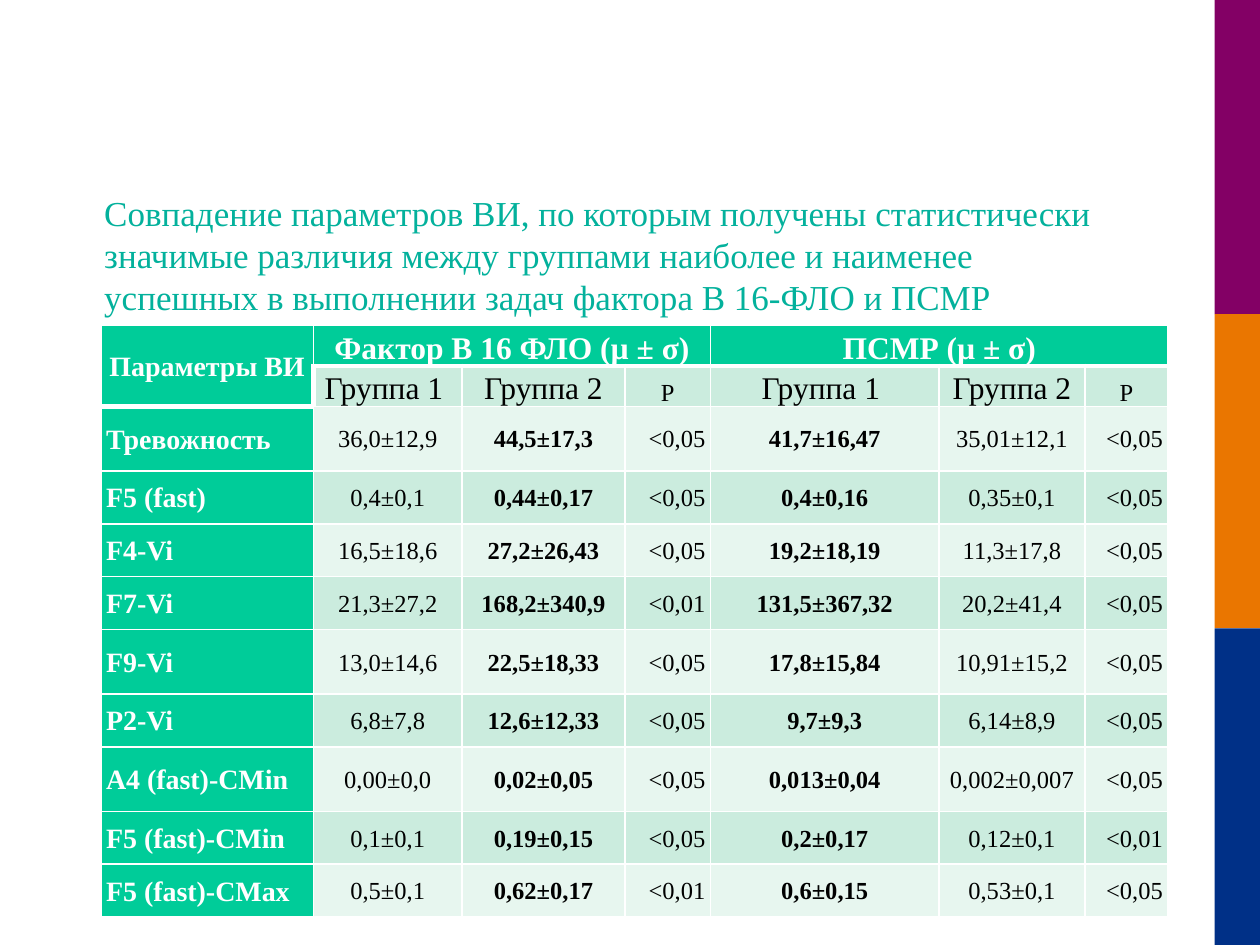
from typing import NamedTuple

from lxml.etree import SubElement
from pptx import Presentation
from pptx.dml.color import RGBColor
from pptx.enum.shapes import MSO_SHAPE
from pptx.enum.text import MSO_ANCHOR, MSO_AUTO_SIZE, PP_ALIGN
from pptx.oxml.ns import qn
from pptx.util import Pt

FONT = "Times New Roman"
WHITE = RGBColor(0xFF, 0xFF, 0xFF)
BLACK = RGBColor(0, 0, 0)
TEAL = RGBColor(0x03, 0xB1, 0x9C)
GREEN = RGBColor(0x00, 0xCC, 0x99)
MINT = RGBColor(0xCB, 0xEC, 0xDE)
PALE = RGBColor(0xE7, 0xF6, 0xEF)
PURPLE = RGBColor(0x83, 0x00, 0x65)
ORANGE = RGBColor(0xEA, 0x76, 0x00)
NAVY = RGBColor(0x00, 0x30, 0x87)

TITLE = (
    "Совпадение параметров ВИ, по которым получены статистически значимые "
    "различия между группами наиболее и наименее успешных в выполнении задач "
    "фактора В 16-ФЛО и ПСМР"
)


class Style(NamedTuple):
    size: int
    color: RGBColor
    bold: bool = False
    align: PP_ALIGN = PP_ALIGN.CENTER
    anchor: MSO_ANCHOR = MSO_ANCHOR.MIDDLE


class Band(NamedTuple):
    top: float
    height: float
    color: RGBColor


class Parameter(NamedTuple):
    name: str
    height: float
    values: tuple[str, ...]


BANDS = [
    Band(0, 179.5, PURPLE),
    Band(179.5, 179.5, ORANGE),
    Band(359, 181, NAVY),
]

CORNER = Style(16, WHITE, True)
TEST = Style(18, WHITE, True, anchor=MSO_ANCHOR.BOTTOM)
GROUP = Style(18, BLACK, anchor=MSO_ANCHOR.BOTTOM)
LEVEL = GROUP._replace(size=14)
NAME = Style(16, WHITE, True, PP_ALIGN.LEFT)
VALUE = Style(14, BLACK)
HIGHER = VALUE._replace(bold=True)
SIGNIFICANCE = VALUE._replace(align=PP_ALIGN.RIGHT)
ROW_STYLES = [NAME, VALUE, HIGHER, SIGNIFICANCE, HIGHER, VALUE, SIGNIFICANCE]

COLUMN_WIDTHS = [121.5, 85, 93, 49, 130.5, 83.5, 47.5]
HEADER_HEIGHTS = [20.5, 21.6]
TALL, SHORT = 36.9, 30.2
SUBHEADS = ["Группа 1 ", "Группа 2", "Р"] * 2

PARAMETERS = [
    Parameter("Тревожность", TALL, ("36,0±12,9", "44,5±17,3", "<0,05", "41,7±16,47", "35,01±12,1", "<0,05")),
    Parameter("F5 (fast)", SHORT, ("0,4±0,1", "0,44±0,17", "<0,05", "0,4±0,16", "0,35±0,1", "<0,05")),
    Parameter("F4-Vi", SHORT, ("16,5±18,6", "27,2±26,43", "<0,05", "19,2±18,19", "11,3±17,8", "<0,05")),
    Parameter("F7-Vi", SHORT, ("21,3±27,2", "168,2±340,9", "<0,01", "131,5±367,32", "20,2±41,4", "<0,05")),
    Parameter("F9-Vi", TALL, ("13,0±14,6", "22,5±18,33", "<0,05", "17,8±15,84", "10,91±15,2", "<0,05")),
    Parameter("P2-Vi", SHORT, ("6,8±7,8", "12,6±12,33", "<0,05", "9,7±9,3", "6,14±8,9", "<0,05")),
    Parameter("A4 (fast)-CMin", TALL, ("0,00±0,0", "0,02±0,05", "<0,05", "0,013±0,04", "0,002±0,007", "<0,05")),
    Parameter("F5 (fast)-CMin", SHORT, ("0,1±0,1", "0,19±0,15", "<0,05", "0,2±0,17", "0,12±0,1", "<0,01")),
    Parameter("F5 (fast)-CMax", SHORT, ("0,5±0,1", "0,62±0,17", "<0,01", "0,6±0,15", "0,53±0,1", "<0,05")),
]


def add_span(para, text: str, size: int, color: RGBColor, bold: bool = False) -> None:
    span = para.add_run()
    span.text = text
    span.font.name = FONT
    span.font.size = Pt(size)
    span.font.color.rgb = color
    span.font.bold = bold


def add_band(page, band: Band) -> None:
    box = page.shapes.add_shape(
        MSO_SHAPE.RECTANGLE, Pt(694), Pt(band.top), Pt(26), Pt(band.height)
    )
    box.shadow.inherit = False
    box.fill.solid()
    box.fill.fore_color.rgb = band.color
    box.line.fill.background()


def add_title(page) -> None:
    box = page.shapes.add_textbox(Pt(52.5), Pt(106), Pt(604), Pt(80))
    frame = box.text_frame
    frame.word_wrap = True
    frame.auto_size = MSO_AUTO_SIZE.SHAPE_TO_FIT_TEXT
    add_span(frame.paragraphs[0], TITLE, 20, TEAL)


def write_cell(cell, text: str, style: Style) -> None:
    cell.vertical_anchor = style.anchor
    para = cell.text_frame.paragraphs[0]
    para.alignment = style.align
    para.line_spacing = 1.07
    add_span(para, text, style.size, style.color, style.bold)


def format_cell(cell, row: int, column: int) -> None:
    """Set margins, borders and fill from the position in the grid."""
    cell.margin_left = cell.margin_right = Pt(3)
    cell.margin_top = cell.margin_bottom = Pt(0)
    first = column == 0
    thick = {
        "L": row == 1 and column == 1,
        "R": False,
        "T": row == (2 if first else 1),
        "B": row == 0 or (row == 1 and first),
    }
    properties = cell._tc.get_or_add_tcPr()
    for side, is_thick in thick.items():
        line = SubElement(properties, qn(f"a:ln{side}"), w=str(Pt(3 if is_thick else 1)))
        fill = SubElement(line, qn("a:solidFill"))
        SubElement(fill, qn("a:srgbClr"), val=str(WHITE))
    cell.fill.solid()
    if row == 0 or first:
        cell.fill.fore_color.rgb = GREEN
    else:
        cell.fill.fore_color.rgb = MINT if row % 2 else PALE


def add_results(page) -> None:
    heights = HEADER_HEIGHTS + [parameter.height for parameter in PARAMETERS]
    table = page.shapes.add_table(
        len(heights), len(COLUMN_WIDTHS), Pt(57.6), Pt(186),
        Pt(sum(COLUMN_WIDTHS)), Pt(sum(heights)),
    ).table
    for column, width in zip(table.columns, COLUMN_WIDTHS):
        column.width = Pt(width)
    for row, height in enumerate(heights):
        table.rows[row].height = Pt(height)
        for column in range(len(COLUMN_WIDTHS)):
            format_cell(table.cell(row, column), row, column)

    # Two-level header
    table.cell(0, 0).merge(table.cell(1, 0))
    write_cell(table.cell(0, 0), "Параметры ВИ", CORNER)
    for column, text in ((1, "Фактор B 16 ФЛО (µ ± σ)"), (4, "ПСМР (µ ± σ)")):
        table.cell(0, column).merge(table.cell(0, column + 2))
        write_cell(table.cell(0, column), text, TEST)
    for column, text in enumerate(SUBHEADS, start=1):
        write_cell(table.cell(1, column), text, LEVEL if text == "Р" else GROUP)

    # Parameter rows
    for row, parameter in enumerate(PARAMETERS, start=2):
        texts = (parameter.name, *parameter.values)
        for column, (text, style) in enumerate(zip(texts, ROW_STYLES)):
            write_cell(table.cell(row, column), text, style)


def main() -> None:
    deck = Presentation()
    deck.slide_width, deck.slide_height = Pt(720), Pt(540)
    page = deck.slides.add_slide(deck.slide_layouts[6])
    for band in BANDS:
        add_band(page, band)
    add_title(page)
    add_results(page)
    deck.save("out.pptx")


if __name__ == "__main__":
    main()
